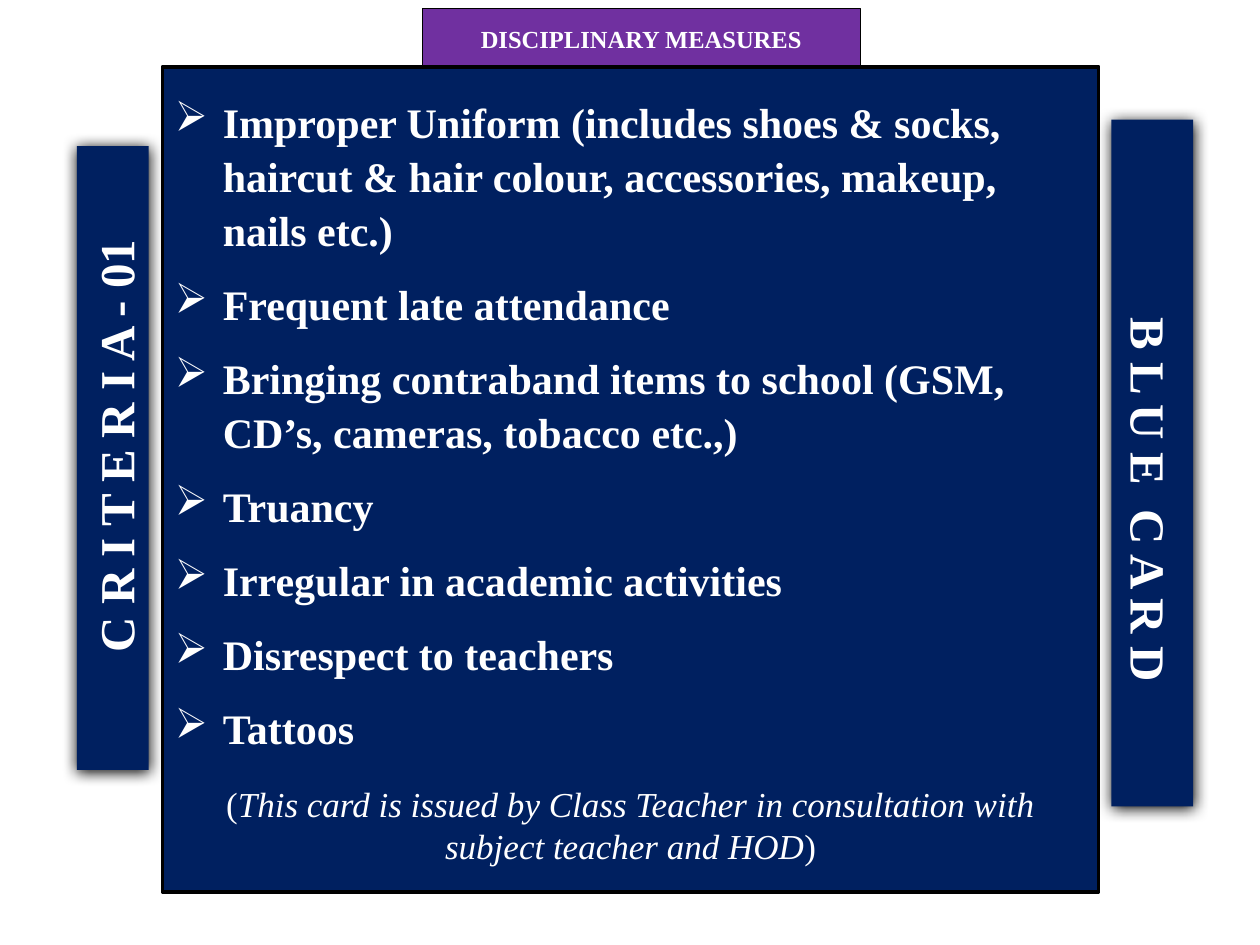
"""Build the disciplinary measures slide for the blue card."""
from dataclasses import dataclass

from lxml.etree import SubElement
from pptx import Presentation
from pptx.dml.color import RGBColor
from pptx.enum.shapes import MSO_SHAPE as Preset
from pptx.enum.text import MSO_ANCHOR as Anchor, PP_ALIGN as Align
from pptx.oxml.ns import qn
from pptx.util import Inches, Pt

FONT = "Times New Roman"
NAVY, PURPLE, WHITE, BLACK = "002060", "7030A0", "FFFFFF", "000000"
LINE_SPACING = 1.07
BULLET_INDENT = 0.38

OFFENCES = [
    "Improper Uniform (includes shoes & socks, haircut & hair colour, "
    "accessories, makeup, nails etc.)",
    "Frequent late attendance",
    "Bringing contraband items to school (GSM, CD’s, cameras, tobacco etc.,)",
    "Truancy",
    "Irregular in academic activities",
    "Disrespect to teachers",
    "Tattoos",
]
NOTE_LINES = [
    [("(", False), ("This card is issued by Class Teacher in consultation with", True)],
    [("subject teacher and HOD", True), (")", False)],
]


@dataclass
class Banner:
    """A vertical side label."""
    text: str
    box: tuple[float, float, float, float]
    direction: str
    indent: float


BANNERS = [
    Banner("C R I T E R I A - 01", (0.61, 1.16, 0.57, 4.95), "vert270", 0.19),
    Banner("B L U E  C A R D", (8.82, 0.95, 0.65, 5.45), "vert", 0.58),
]


def color(value: str) -> RGBColor:
    """Turn a hex string into a colour."""
    return RGBColor.from_string(value)


def paint(shape, fill: str, line_width: float = 0) -> None:
    """Fill a shape and give it a black outline or none."""
    shape.fill.solid()
    shape.fill.fore_color.rgb = color(fill)
    if line_width:
        shape.line.color.rgb = color(BLACK)
        shape.line.width = Pt(line_width)
    else:
        shape.line.fill.background()


def set_font(paragraph, size: float, bold: bool = False) -> None:
    """Set the white serif font of a paragraph."""
    font = paragraph.font
    font.name, font.size, font.bold = FONT, Pt(size), bold
    font.color.rgb = color(WHITE)


def set_indent(paragraph, left: float, first: float = 0) -> None:
    """Set the left margin and first-line indent in inches."""
    properties = paragraph._p.get_or_add_pPr()
    properties.set("marL", str(Inches(left)))
    properties.set("indent", str(Inches(first)))


def add_rectangle(slide, box: tuple[float, float, float, float], fill: str, line_width: float = 0):
    """Add a painted rectangle without a shadow."""
    shape = slide.shapes.add_shape(Preset.RECTANGLE, *map(Inches, box))
    paint(shape, fill, line_width)
    shape.shadow.inherit = False
    shape.text_frame.word_wrap = True
    return shape


def add_shadow(shape) -> None:
    """Add a soft black shadow just below a shape."""
    effects = shape._element.spPr.find(qn("a:effectLst"))
    shadow = SubElement(effects, qn("a:outerShdw"), blurRad=str(Pt(8.5)),
                        dist=str(Pt(1)), dir="5400000", algn="ctr", rotWithShape="0")
    SubElement(shadow, qn("a:srgbClr"), val=BLACK)


def format_title(title) -> None:
    """Place and format the slide title."""
    title.left, title.top, title.width, title.height = map(Inches, (3.35, 0.07, 3.48, 0.46))
    paint(title, PURPLE, 0.5)
    title.text_frame.text = "DISCIPLINARY MEASURES"
    title.text_frame.vertical_anchor = Anchor.MIDDLE
    paragraph = title.text_frame.paragraphs[0]
    paragraph.alignment = Align.CENTER
    paragraph.line_spacing = LINE_SPACING
    set_font(paragraph, 14, bold=True)


def add_banner(slide, banner: Banner) -> None:
    """Draw one vertical label."""
    shape = add_rectangle(slide, banner.box, NAVY)
    add_shadow(shape)
    frame = shape.text_frame
    frame.vertical_anchor = Anchor.MIDDLE
    frame._txBody.bodyPr.set("vert", banner.direction)
    paragraph = frame.paragraphs[0]
    paragraph.text = banner.text
    paragraph.alignment = Align.CENTER
    paragraph.line_spacing = LINE_SPACING
    paragraph.space_after = Pt(8)
    set_indent(paragraph, banner.indent)
    set_font(paragraph, 28, bold=True)


def add_panel(slide) -> None:
    """Draw the panel with the offences and the closing note."""
    frame = add_rectangle(slide, (1.29, 0.53, 7.43, 6.55), NAVY, 2).text_frame
    frame.vertical_anchor = Anchor.TOP
    frame.margin_top = Inches(0.21)
    for index, offence in enumerate(OFFENCES):
        paragraph = frame.add_paragraph() if index else frame.paragraphs[0]
        paragraph.text = offence
        paragraph.alignment = Align.LEFT
        paragraph.line_spacing = LINE_SPACING
        if index:
            paragraph.space_before = Pt(11.5)
        set_indent(paragraph, BULLET_INDENT, -BULLET_INDENT)
        SubElement(paragraph._p.get_or_add_pPr(), qn("a:buChar"), char="➢")
        set_font(paragraph, 24, bold=True)
    for index, pieces in enumerate(NOTE_LINES):
        paragraph = frame.add_paragraph()
        paragraph.alignment = Align.CENTER
        paragraph.space_before = Pt(0 if index else 16.5)
        set_font(paragraph, 20)
        for text, italic in pieces:
            run = paragraph.add_run()
            run.text, run.font.italic = text, italic


def main() -> None:
    """Build and save the presentation."""
    presentation = Presentation()
    presentation.slide_width, presentation.slide_height = Inches(10), Inches(7.5)
    slide = presentation.slides.add_slide(presentation.slide_layouts[5])
    format_title(slide.shapes.title)
    add_panel(slide)
    for banner in BANNERS:
        add_banner(slide, banner)
    presentation.save("out.pptx")


if __name__ == "__main__":
    main()
